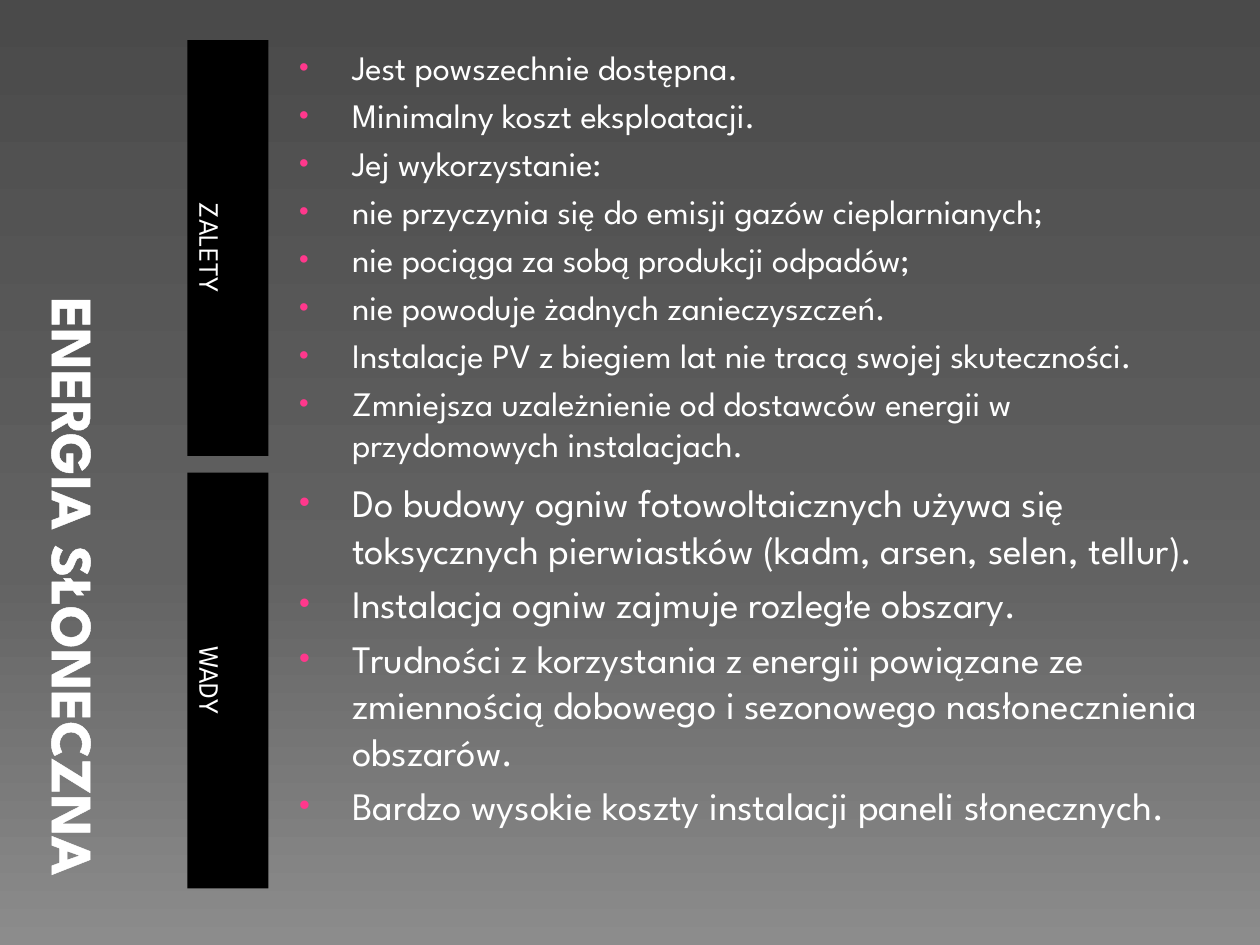
from dataclasses import dataclass

from lxml.etree import SubElement
from pptx import Presentation
from pptx.dml.color import RGBColor
from pptx.enum.shapes import MSO_SHAPE
from pptx.enum.text import MSO_ANCHOR, PP_ALIGN
from pptx.oxml.ns import qn
from pptx.util import Cm, Pt

FACE = "League Spartan"
WHITE, BLACK, PINK = "FFFFFF", "000000", "FF388C"
SHADES = ((0, "4A4A4A"), (60, "626262"), (100, "8C8C8C"))
TOP, STEP, TALL = 0.81, 8.72, 8.38  # section rows, in cm
BAR_X, BAR_W = 3.78, 1.63
LIST_X, LIST_W = 5.61, 19.05


@dataclass
class Section:
    label: str
    size: float
    high: float
    lines: tuple[str, ...]


SECTIONS = (
    Section("ZALETY", 19.6, 9.32, (
        "Jest powszechnie dostępna.",
        "Minimalny koszt eksploatacji.",
        "Jej wykorzystanie:",
        "nie przyczynia się do emisji gazów cieplarnianych;",
        "nie pociąga za sobą produkcji odpadów;",
        "nie powoduje żadnych zanieczyszczeń.",
        "Instalacje PV z biegiem lat nie tracą swojej skuteczności.",
        "Zmniejsza uzależnienie od dostawców energii w przydomowych instalacjach.",
    )),
    Section("WADY", 22.2, TALL, (
        "Do budowy ogniw fotowoltaicznych używa się toksycznych pierwiastków "
        "(kadm, arsen, selen, tellur).",
        "Instalacja ogniw zajmuje rozległe obszary.",
        "Trudności z korzystania z energii powiązane ze zmiennością dobowego "
        "i sezonowego nasłonecznienia obszarów.",
        "Bardzo wysokie koszty instalacji paneli słonecznych.",
    )),
)


def shade(code: str) -> RGBColor:
    return RGBColor.from_string(code)


def style(item, **form) -> None:
    for key, value in form.items():
        setattr(item, key, value)


def write(para, text: str, size: float, bold: bool = False):
    run = para.add_run()
    run.text = text
    style(run.font, name=FACE, size=Pt(size), bold=bold)
    run.font.color.rgb = shade(WHITE)
    return run


def turn(frame) -> None:
    """Run the text down the box, resting on its left side."""
    style(frame, word_wrap=True, vertical_anchor=MSO_ANCHOR.BOTTOM)
    frame._txBody.bodyPr.set("vert", "vert")


def bullet(para) -> None:
    props = para._p.get_or_add_pPr()
    props.set("marL", str(Cm(1.24)))
    props.set("indent", str(-Cm(1.07)))
    tint = SubElement(props, qn("a:buClr"))
    SubElement(tint, qn("a:srgbClr"), val=PINK)
    SubElement(props, qn("a:buSzPct"), val="80000")
    SubElement(props, qn("a:buFont"), typeface="Arial")
    SubElement(props, qn("a:buChar"), char="•")


def backdrop(slide) -> None:
    fill = slide.background.fill
    fill.gradient()
    fill.gradient_angle = 270
    stops = next(slide.element.iter(qn("a:gsLst")))
    for stop in list(stops):
        stops.remove(stop)
    for place, code in SHADES:
        stop = SubElement(stops, qn("a:gs"), pos=str(place * 1000))
        SubElement(stop, qn("a:srgbClr"), val=code)


def title(slide, text: str) -> None:
    box = slide.shapes.add_textbox(Cm(0.69), Cm(TOP), Cm(2.97), Cm(17.09))
    turn(box.text_frame)
    para = box.text_frame.paragraphs[0]
    para.alignment = PP_ALIGN.RIGHT
    run = write(para, text, 33, True)
    # Thin white edge around the letters, which must precede the fill
    props = run._r.get_or_add_rPr()
    edge = SubElement(props, qn("a:ln"), w=str(Pt(0.5)))
    fill = SubElement(edge, qn("a:solidFill"))
    SubElement(fill, qn("a:srgbClr"), val=WHITE)
    props.insert(0, edge)


def label(slide, part: Section, top: float) -> None:
    bar = slide.shapes.add_shape(
        MSO_SHAPE.RECTANGLE, Cm(BAR_X), Cm(top), Cm(BAR_W), Cm(TALL))
    bar.shadow.inherit = False
    bar.fill.solid()
    bar.fill.fore_color.rgb = shade(BLACK)
    bar.line.fill.background()
    turn(bar.text_frame)
    para = bar.text_frame.paragraphs[0]
    para.alignment = PP_ALIGN.CENTER
    write(para, part.label, 16)


def points(slide, part: Section, top: float) -> None:
    box = slide.shapes.add_textbox(
        Cm(LIST_X), Cm(top), Cm(LIST_W), Cm(part.high))
    frame = box.text_frame
    frame.word_wrap = True
    for row, line in enumerate(part.lines):
        para = frame.add_paragraph() if row else frame.paragraphs[0]
        para.space_before = Pt(round(part.size * 0.2, 1))
        bullet(para)
        write(para, line, part.size)


def main() -> None:
    deck = Presentation()
    style(deck, slide_width=Cm(25.4), slide_height=Cm(19.05))
    slide = deck.slides.add_slide(deck.slide_layouts[6])
    backdrop(slide)
    title(slide, "ENERGIA SŁONECZNA")
    # Black side bars with their lists
    for row, part in enumerate(SECTIONS):
        top = TOP + row * STEP
        label(slide, part, top)
        points(slide, part, top)
    deck.save("out.pptx")


if __name__ == "__main__":
    main()
